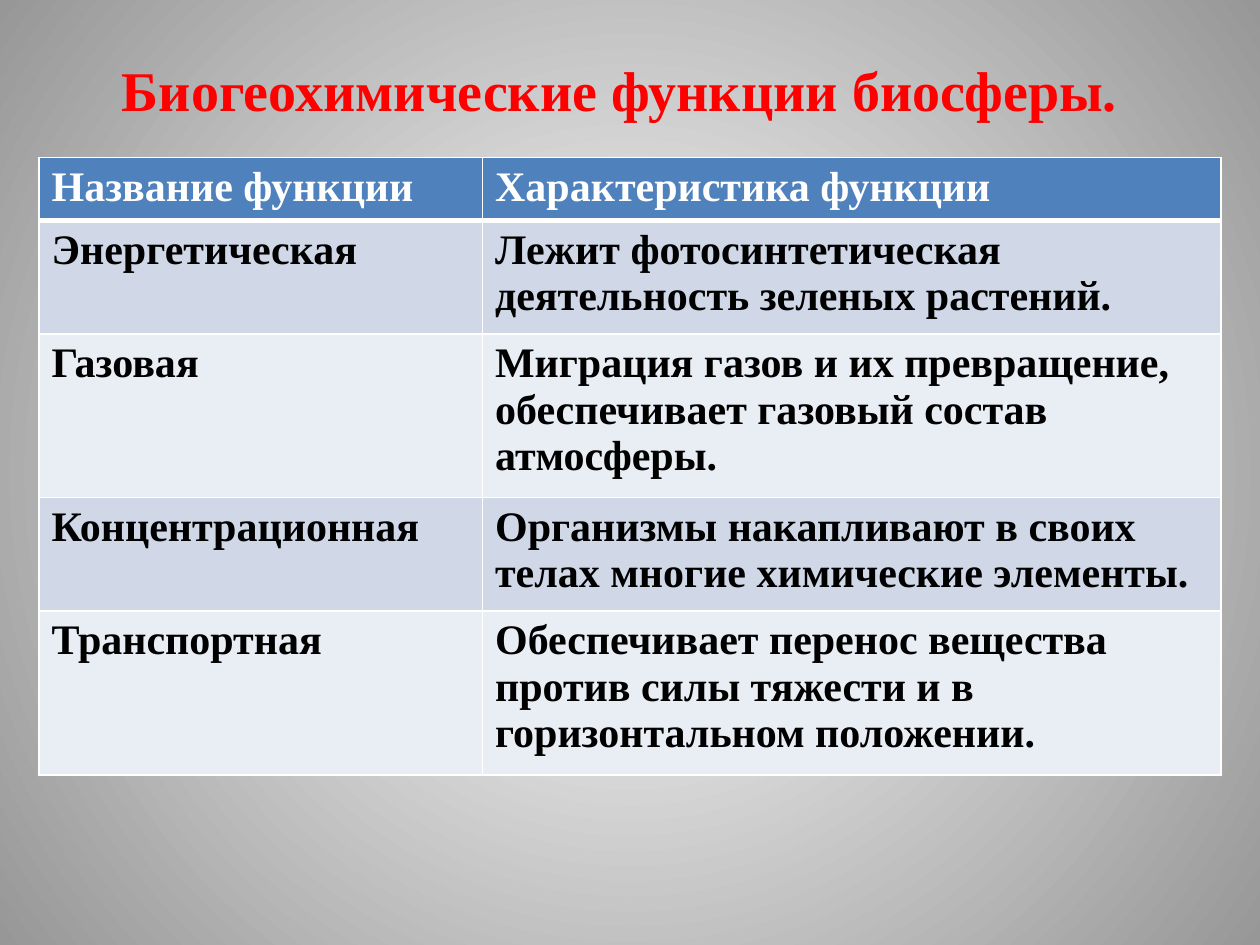
import pptx
import pptx.util
from pptx.dml.color import RGBColor
from pptx.enum.text import MSO_ANCHOR, PP_ALIGN
from pptx.oxml.ns import qn
from pptx.oxml.xmlchemy import OxmlElement
from pptx.util import Inches, Pt

FONT = "Times New Roman"
COLORS = {
    "title": "FF0000",
    "header": "4F81BD",
    "band_dark": "D0D8E8",
    "band_light": "E9EDF4",
    "white": "FFFFFF",
    "black": "000000",
    "edge": "979797",
}
ROWS = [
    ("Название функции", "Характеристика функции"),
    ("Энергетическая", "Лежит фотосинтетическая деятельность зеленых растений."),
    ("Газовая", "Миграция газов и их превращение, обеспечивает газовый состав атмосферы."),
    ("Концентрационная", "Организмы накапливают в своих телах многие химические элементы."),
    ("Транспортная", "Обеспечивает перенос вещества против силы тяжести и в горизонтальном положении."),
]
COL_WIDTHS = [3.52, 5.86]
ROW_HEIGHTS = [0.5, 0.9, 1.3, 0.9, 1.3]


def rgb(name):
    return RGBColor.from_string(COLORS[name])


def add_child(parent, tag, **attrs):
    child = OxmlElement(tag)
    for key, value in attrs.items():
        child.set(key, str(value))
    parent.append(child)
    return child


def set_background(s):
    fill = s.background.fill
    fill.gradient()
    for stop, name in zip(fill.gradient_stops, ("white", "edge")):
        stop.color.rgb = rgb(name)
    grad = s.element.find(".//" + qn("a:gradFill"))
    grad.remove(grad.find(qn("a:lin")))
    circle = add_child(grad, "a:path", path="circle")
    add_child(circle, "a:fillToRect", l=50000, t=50000, r=50000, b=50000)


def format_text(tf, size, color):
    for p in tf.paragraphs:
        for r in p.runs:
            r.font.name = FONT
            r.font.size = Pt(size)
            r.font.bold = True
            r.font.color.rgb = rgb(color)


def set_title(s, text):
    sp = s.shapes.title
    sp.left, sp.top = Inches(0.39), Inches(0.39)
    sp.width, sp.height = Inches(9.06), Inches(0.64)
    tf = sp.text_frame
    tf.text = text
    tf.word_wrap = True
    tf.vertical_anchor = MSO_ANCHOR.TOP
    tf.paragraphs[0].alignment = PP_ALIGN.CENTER
    format_text(tf, 32, "title")


def set_borders(cell, top, bottom):
    tc_pr = cell._tc.get_or_add_tcPr()
    for side, width in (("L", 1), ("R", 1), ("T", top), ("B", bottom)):
        line = add_child(tc_pr, f"a:ln{side}", w=Pt(width))
        add_child(add_child(line, "a:solidFill"), "a:srgbClr", val=COLORS["white"])


def add_functions_table(s):
    table = s.shapes.add_table(
        len(ROWS), len(COL_WIDTHS), Inches(0.31), Inches(1.25),
        Inches(sum(COL_WIDTHS)), Inches(sum(ROW_HEIGHTS))).table
    for column, width in zip(table.columns, COL_WIDTHS):
        column.width = Inches(width)
    for i, (texts, height) in enumerate(zip(ROWS, ROW_HEIGHTS)):
        table.rows[i].height = Inches(height)
        band = "header" if i == 0 else "band_dark" if i % 2 else "band_light"
        for cell, text in zip(table.rows[i].cells, texts):
            cell.text_frame.text = text
            format_text(cell.text_frame, 24, "black" if i else "white")
            set_borders(cell, 3 if i == 1 else 1, 3 if i == 0 else 1)
            cell.fill.solid()
            cell.fill.fore_color.rgb = rgb(band)


def main():
    prs = pptx.Presentation()
    prs.slide_width, prs.slide_height = Inches(10), Inches(7.5)
    s = prs.slides.add_slide(prs.slide_layouts[5])
    set_background(s)
    set_title(s, "Биогеохимические функции биосферы.")
    add_functions_table(s)
    prs.save("out.pptx")


if __name__ == "__main__":
    main()
